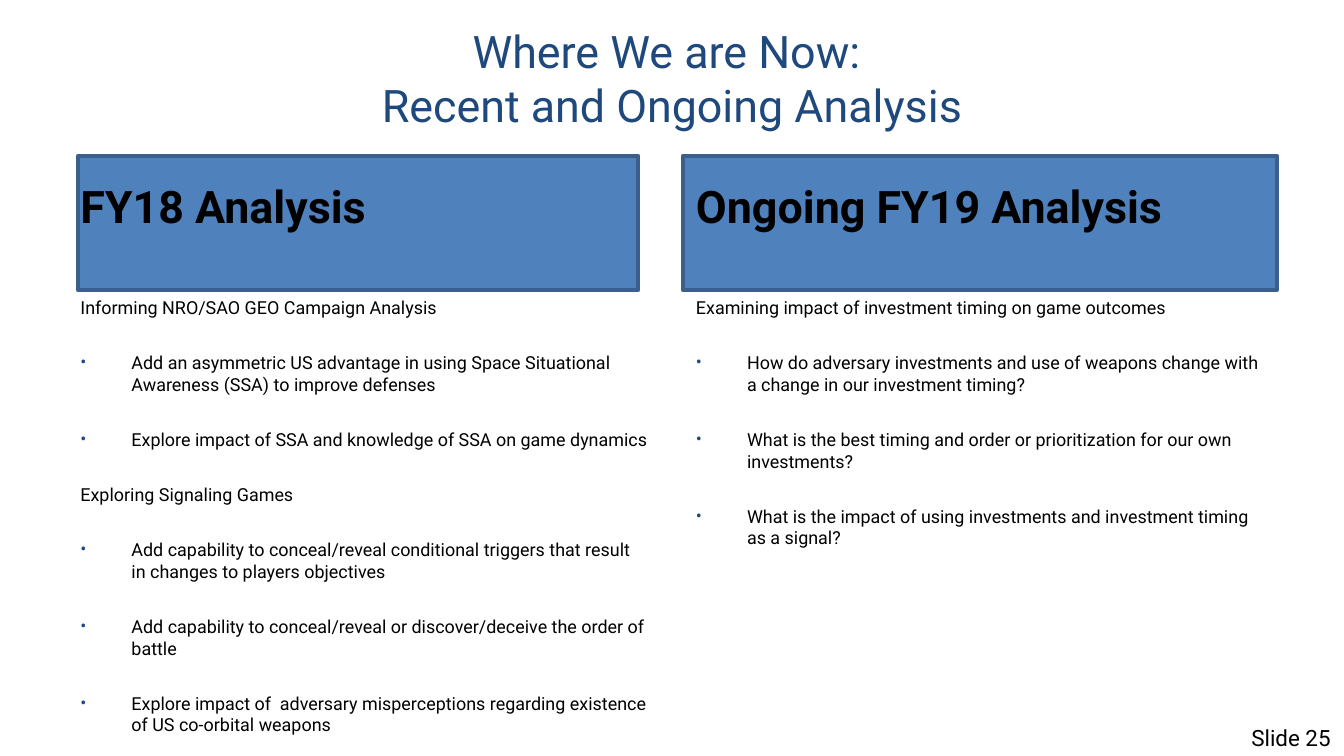
from lxml import etree
from pptx import Presentation
from pptx.dml.color import RGBColor
from pptx.enum.shapes import MSO_SHAPE
from pptx.enum.text import MSO_ANCHOR, MSO_AUTO_SIZE, PP_ALIGN
from pptx.oxml.ns import qn
from pptx.util import Inches, Pt

RECT = MSO_SHAPE.RECTANGLE
TOP, MIDDLE, BOTTOM = MSO_ANCHOR.TOP, MSO_ANCHOR.MIDDLE, MSO_ANCHOR.BOTTOM
LEFT, CENTER, RIGHT = PP_ALIGN.LEFT, PP_ALIGN.CENTER, PP_ALIGN.RIGHT
NO_AUTOFIT = MSO_AUTO_SIZE.NONE

# Content: each topic is a lead line with its bullets
TITLE = "Where We are Now: \vRecent and Ongoing Analysis"
SLIDE_LABEL = "Slide 25"
COLUMNS = [
    {
        "heading": "FY18 Analysis",
        "left": 0.5, "band": (0.58, 4.17), "body_height": 3.24,
        "topics": [
            ("Informing NRO/SAO GEO Campaign Analysis", [
                "Add an asymmetric US advantage in using Space Situational "
                "Awareness (SSA) to improve defenses",
                "Explore impact of SSA and knowledge of SSA on game dynamics",
            ]),
            ("Exploring Signaling Games", [
                "Add capability to conceal/reveal conditional triggers that "
                "result in changes to players objectives",
                "Add capability to conceal/reveal or discover/deceive the "
                "order of battle",
                "Explore impact of  adversary misperceptions regarding "
                "existence of US co-orbital weapons",
            ]),
        ],
    },
    {
        "heading": "Ongoing FY19 Analysis",
        "left": 5.08, "band": (5.08, 4.42), "body_height": 3.12,
        "topics": [
            ("Examining impact of investment timing on game outcomes", [
                "How do adversary investments and use of weapons change with "
                "a change in our investment timing?",
                "What is the best timing and order or prioritization for our "
                "own investments?",
                "What is the impact of using investments and investment "
                "timing as a signal?",
            ]),
        ],
    },
]

THEME = {
    "font": "Roboto",
    "navy": "1F497D", "band": "4F81BD", "band_line": "3A5F8C", "text": "000000",
    "heading_size": 24, "body_size": 9.6, "label_size": 12,
}
COLUMN_WIDTH = 4.42
BULLET_INDENT = 0.38


def rgb(name):
    return RGBColor.from_string(THEME[name])


def add_bullet(p):
    """Give a paragraph a hanging navy bullet."""
    pPr = p._p.get_or_add_pPr()
    pPr.set("marL", str(Inches(BULLET_INDENT)))
    pPr.set("indent", str(-Inches(BULLET_INDENT)))
    color = etree.SubElement(pPr, qn("a:buClr"))
    etree.SubElement(color, qn("a:srgbClr"), val=THEME["navy"])
    etree.SubElement(pPr, qn("a:buFont"), typeface=THEME["font"])
    etree.SubElement(pPr, qn("a:buChar"), char="•")


def write(sp, paragraphs, size="body_size", color="text", bold=False,
          align=LEFT, anchor=TOP, before=0):
    """Fill a shape with (text, is_bullet) paragraphs in one format."""
    tf = sp.text_frame
    tf.word_wrap = True
    tf.auto_size = NO_AUTOFIT
    tf.vertical_anchor = anchor
    for i, (text, is_bullet) in enumerate(paragraphs):
        p = tf.paragraphs[0] if i == 0 else tf.add_paragraph()
        p.text = text
        p.alignment = align
        p.space_before = Pt(before)
        if is_bullet:
            add_bullet(p)
        for r in p.runs:
            r.font.name = THEME["font"]
            r.font.size = Pt(THEME[size])
            r.font.bold = bold
            r.font.color.rgb = rgb(color)


def add_text(s, box, paragraphs, **fmt):
    write(s.shapes.add_textbox(*map(Inches, box)), paragraphs, **fmt)


def add_band(s, left, width):
    sp = s.shapes.add_shape(RECT, *map(Inches, (left, 1.16, width, 1)))
    sp.shadow.inherit = False
    sp.fill.solid()
    sp.fill.fore_color.rgb = rgb("band")
    sp.line.color.rgb = rgb("band_line")
    sp.line.width = Pt(2)


def add_column(s, column):
    add_band(s, *column["band"])
    left = column["left"]
    add_text(s, (left, 1.26, COLUMN_WIDTH, 0.52), [(column["heading"], False)],
             size="heading_size", bold=True, anchor=BOTTOM, before=18)
    body = []
    for lead, bullets in column["topics"]:
        body.append((lead, False))
        body += [(bullet, True) for bullet in bullets]
    add_text(s, (left, 2.16, COLUMN_WIDTH, column["body_height"]), body, before=18)


def main():
    # Widescreen slide, 16:9
    prs = Presentation()
    prs.slide_width = Inches(10)
    prs.slide_height = Inches(10 * 9 / 16)
    s = prs.slides.add_slide(prs.slide_layouts[5])

    # Title
    title = s.shapes.title
    title.left, title.top, title.width, title.height = map(Inches, (0.5, 0, 9, 1.16))
    write(title, [(TITLE, False)], size="heading_size", color="navy",
          align=CENTER, anchor=MIDDLE)

    # Slide label and the two columns
    add_text(s, (5.47, 5.34, 4.53, 0.3), [(SLIDE_LABEL, False)],
             size="label_size", align=RIGHT)
    for column in COLUMNS:
        add_column(s, column)

    prs.save("out.pptx")


if __name__ == "__main__":
    main()
